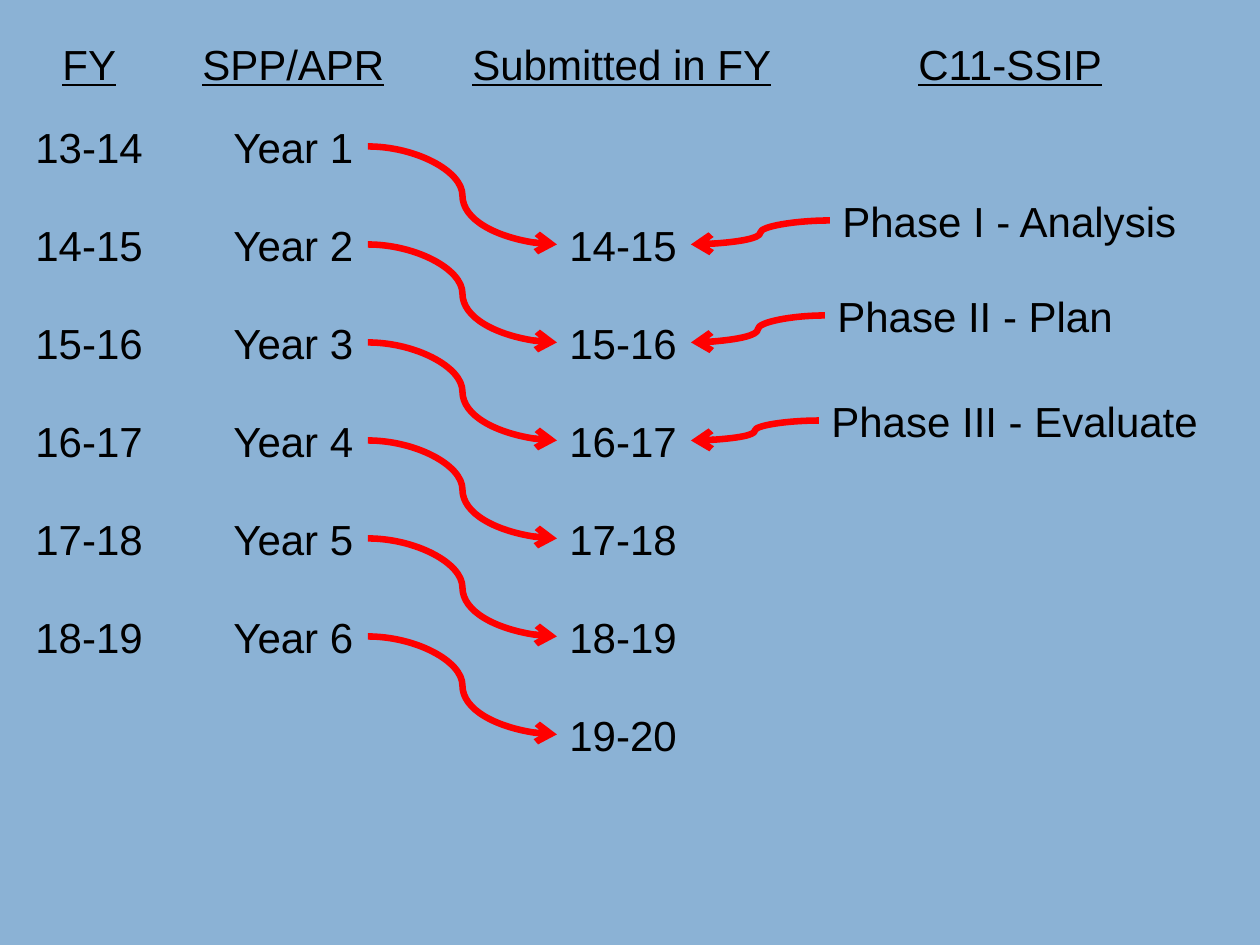
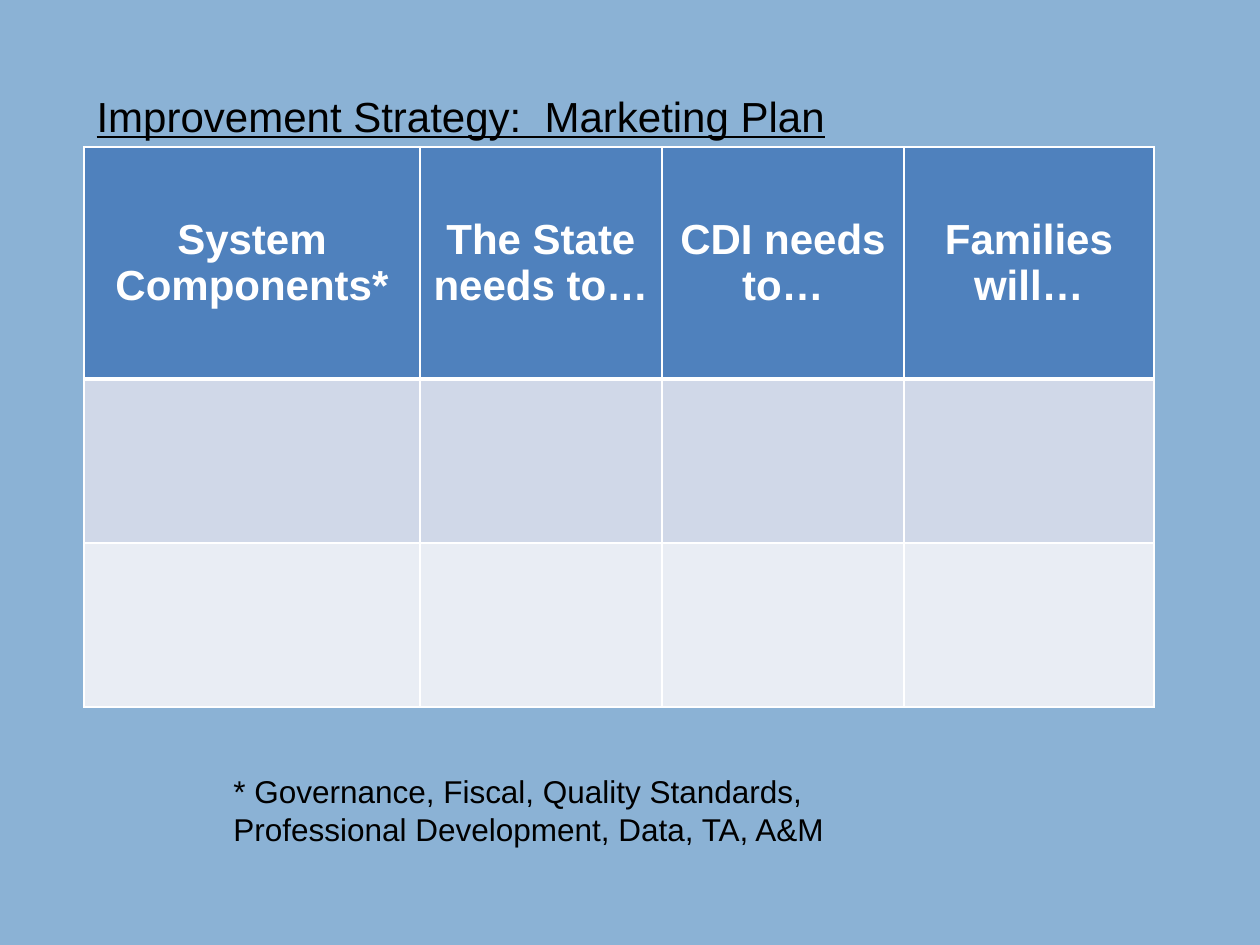
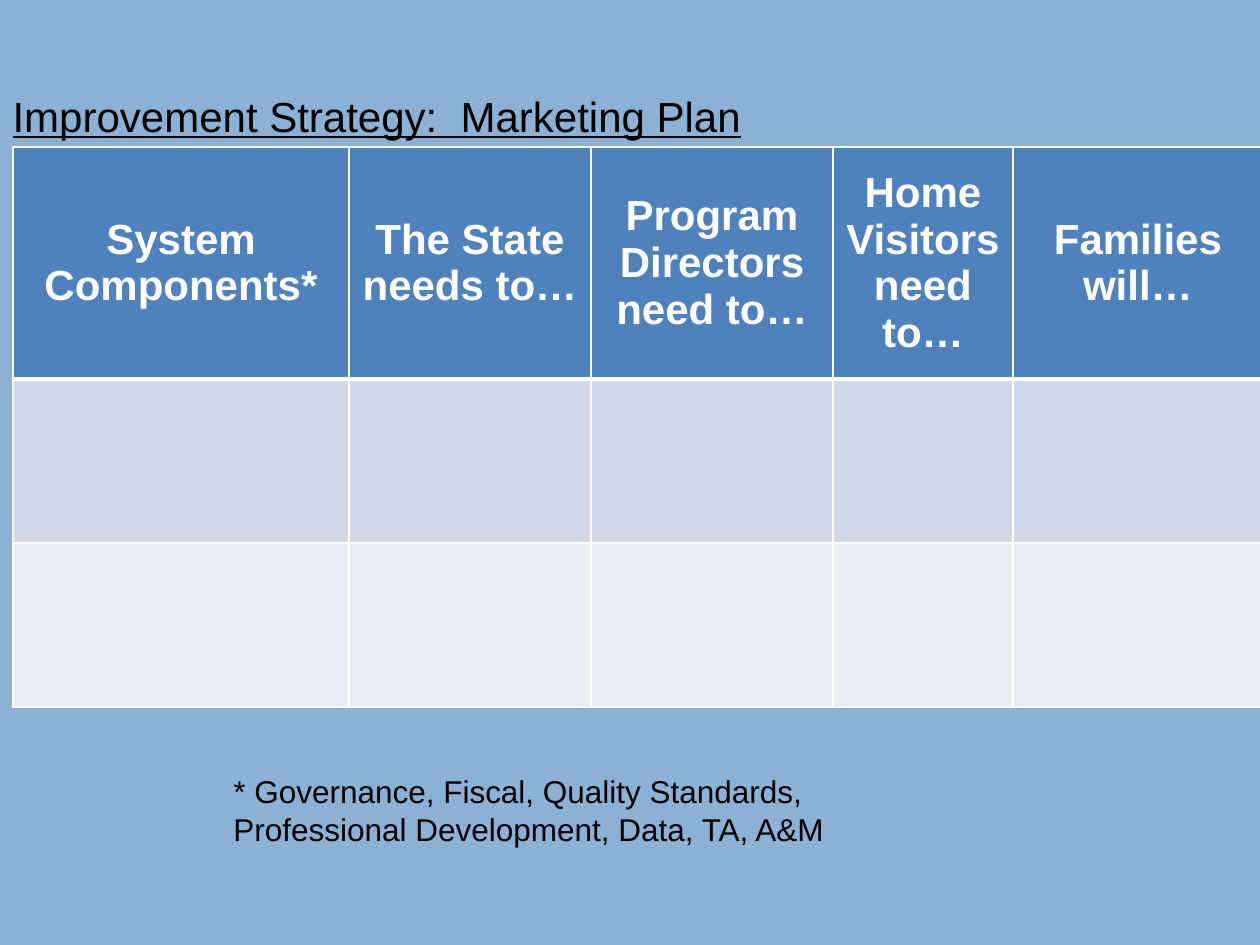
from dataclasses import dataclass

from lxml import etree
from pptx import Presentation
from pptx.dml.color import RGBColor
from pptx.enum.shapes import MSO_CONNECTOR
from pptx.enum.text import MSO_ANCHOR, MSO_AUTO_SIZE, PP_ALIGN
from pptx.oxml.ns import qn
from pptx.util import Emu, Pt

CURVE = MSO_CONNECTOR.CURVE
TOP, MIDDLE = MSO_ANCHOR.TOP, MSO_ANCHOR.MIDDLE
LEFT, CENTER = PP_ALIGN.LEFT, PP_ALIGN.CENTER
GROW = MSO_AUTO_SIZE.SHAPE_TO_FIT_TEXT
LEFT_SITE, RIGHT_SITE = 1, 3
PX_PER_INCH = 126
TITLE_ONLY, BLANK = 5, 6


@dataclass(frozen=True)
class Theme:
    background: str = "8BB2D5"
    ink: str = "000000"
    arrow: str = "FF0000"
    white: str = "FFFFFF"
    row_fills: tuple = ("4F81BD", "D0D8E8", "E9EDF4")
    font: str = "Arial"
    text_size: int = 24
    note_size: int = 18
    arrow_width: float = 3.75
    border: int = 1
    header_border: int = 3


theme = Theme()


def px(*lengths):
    return [Emu(round(length * 914400 / PX_PER_INCH)) for length in lengths]


def write(frame, text, color=theme.ink, size=theme.text_size, align=LEFT, **formats):
    """Put one formatted paragraph into a text frame."""
    paragraph = frame.paragraphs[0]
    paragraph.alignment = align
    run = paragraph.add_run()
    run.text = text
    run.font.color.rgb = RGBColor.from_string(color)
    for name, value in {"name": theme.font, "size": Pt(size), **formats}.items():
        setattr(run.font, name, value)


presentation = Presentation()
presentation.slide_width, presentation.slide_height = px(1260, 945)
background = presentation.slide_master.background.fill
background.solid()
background.fore_color.rgb = RGBColor.from_string(theme.background)

# Slide 1: timeline
ROW_TOP, ROW_PITCH, BOX_HEIGHT = 115, 98, 63
fiscal_years = [f"{year}-{year + 1}" for year in range(13, 20)]
row_tops = [ROW_TOP + ROW_PITCH * row for row in range(len(fiscal_years))]

headings = [("FY", 50, 79), ("SPP/APR", 190, 209),
            ("Submitted in FY", 460, 328), ("C11-SSIP", 906, 210)]
labels = [(text, left, 32, width, True) for text, left, width in headings]
for row, top in enumerate(row_tops):
    if row < 6:
        labels.append((fiscal_years[row], 23, top, 134, False))
        labels.append((f"Year {row + 1}", 221, top, 147, False))
    if row > 0:
        labels.append((fiscal_years[row], 557, top, 134, False))
phases = [("Phase I - Analysis", 830, 189, 363), ("Phase II - Plan", 825, 284, 304),
          ("Phase III - Evaluate", 819, 389, 396)]
labels += [(*phase, False) for phase in phases]

slide = presentation.slides.add_slide(presentation.slide_layouts[BLANK])
boxes = {}
for text, left, top, width, is_heading in labels:
    box = slide.shapes.add_textbox(*px(left, top, width, BOX_HEIGHT))
    box.text_frame.word_wrap = False
    box.text_frame.auto_size = GROW
    write(box.text_frame, text, underline=is_heading)
    boxes[text, left] = box

submitted = [boxes[year, 557] for year in fiscal_years[1:]]
arrows = [(boxes[f"Year {number}", 221], RIGHT_SITE, target, LEFT_SITE)
          for number, target in enumerate(submitted, 1)]
arrows += [(boxes[text, left], LEFT_SITE, target, RIGHT_SITE)
           for (text, left, top, width), target in zip(phases, submitted)]
for source, source_site, target, target_site in arrows:
    connector = slide.shapes.add_connector(CURVE, 0, 0, 0, 0)
    connector.begin_connect(source, source_site)
    connector.end_connect(target, target_site)
    connector.line.color.rgb = RGBColor.from_string(theme.arrow)
    connector.line.width = Pt(theme.arrow_width)
    properties = connector._element.spPr
    etree.SubElement(properties.find(qn("a:ln")), qn("a:tailEnd"), type="arrow")
    etree.SubElement(properties, qn("a:effectLst"))

# Slides 2 and 3: improvement strategy tables
ROW_HEIGHTS = (232, 164, 164)
components = ("System Components*", 336)
state = ("The State needs to…", 242)
families = ("Families will…", 250)
strategy_slides = [
    (84, 84, [components, state, ("CDI needs to…", 242), families]),
    (0, 13, [components, state, ("Program Directors need to…", 242),
             ("Home Visitors need to…", 180), families]),
]
for title_left, table_left, columns in strategy_slides:
    slide = presentation.slides.add_slide(presentation.slide_layouts[TITLE_ONLY])
    title = slide.shapes.title
    title.left, title.top, title.width, title.height = px(title_left, 84, 809, 63)
    title.text_frame.vertical_anchor = TOP
    title.text_frame.auto_size = GROW
    write(title.text_frame, "Improvement Strategy:  Marketing Plan", underline=True)

    table_width = sum(width for heading, width in columns)
    table = slide.shapes.add_table(
        len(ROW_HEIGHTS), len(columns),
        *px(table_left, 147, table_width, sum(ROW_HEIGHTS))).table
    for row, height in zip(table.rows, px(*ROW_HEIGHTS)):
        row.height = height
    for column_number, (heading, width) in enumerate(columns):
        table.columns[column_number].width = px(width)[0]
        for row_number, fill in enumerate(theme.row_fills):
            cell = table.cell(row_number, column_number)
            cell.fill.solid()
            cell.fill.fore_color.rgb = RGBColor.from_string(fill)
            borders = dict.fromkeys(("lnL", "lnR", "lnT", "lnB"), theme.border)
            if row_number == 0:
                borders["lnB"] = theme.header_border
                cell.vertical_anchor = MIDDLE
                write(cell.text_frame, heading, theme.white, align=CENTER, bold=True)
            elif row_number == 1:
                borders["lnT"] = theme.header_border
            cell_properties = cell._tc.get_or_add_tcPr()
            for position, (side, points) in enumerate(borders.items()):
                line = etree.Element(qn(f"a:{side}"), w=str(Pt(points)))
                line_fill = etree.SubElement(line, qn("a:solidFill"))
                etree.SubElement(line_fill, qn("a:srgbClr"), val=theme.white)
                cell_properties.insert(position, line)

    note = slide.shapes.add_textbox(*px(221, 766, 756, 89))
    note.text_frame.word_wrap = True
    note.text_frame.auto_size = GROW
    write(note.text_frame, "* Governance, Fiscal, Quality Standards, "
          "Professional Development, Data, TA, A&M", size=theme.note_size)

presentation.save("out.pptx")
